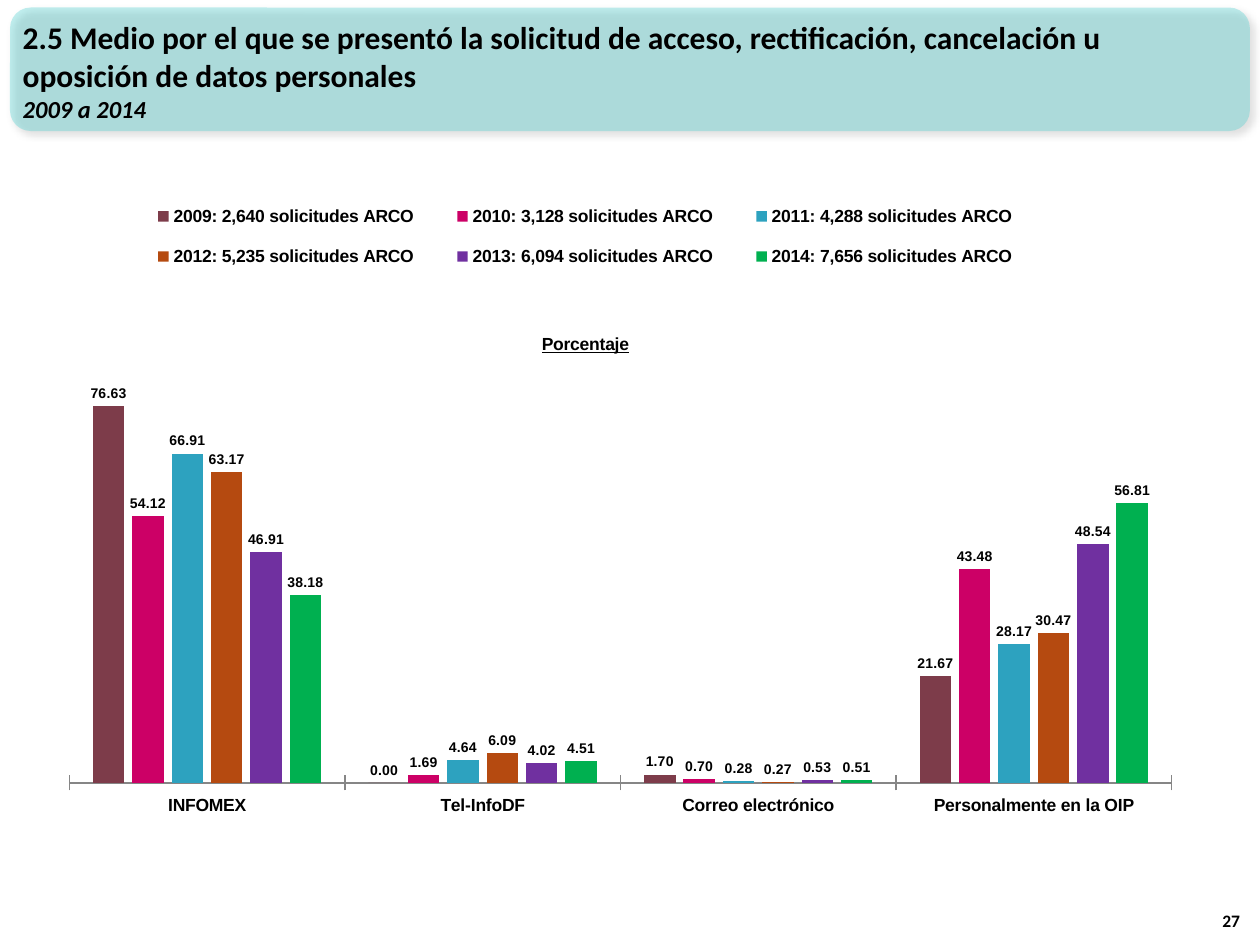
from lxml.etree import SubElement
from pptx import Presentation
from pptx.chart.data import CategoryChartData
from pptx.dml.color import RGBColor
from pptx.enum.chart import XL_CHART_TYPE, XL_LABEL_POSITION, XL_LEGEND_POSITION, XL_TICK_LABEL_POSITION, XL_TICK_MARK
from pptx.enum.shapes import MSO_SHAPE
from pptx.enum.text import MSO_ANCHOR, MSO_AUTO_SIZE, PP_ALIGN
from pptx.oxml import parse_xml
from pptx.oxml.ns import nsdecls, qn
from pptx.util import Inches, Pt

CATEGORIES = ["INFOMEX", "Tel-InfoDF", "Correo electrónico", "Personalmente en la OIP"]
SERIES = [
    ("2009: 2,640 solicitudes ARCO", (76.63, 0, 1.7, 21.67), "7D3C4A"),
    ("2010: 3,128 solicitudes ARCO", (54.12, 1.69, 0.7, 43.48), "CC0066"),
    ("2011: 4,288 solicitudes ARCO", (66.91, 4.64, 0.28, 28.17), "2DA2BF"),
    ("2012: 5,235 solicitudes ARCO", (63.17, 6.09, 0.27, 30.47), "B54A10"),
    ("2013: 6,094 solicitudes ARCO", (46.91, 4.02, 0.53, 48.54), "7030A0"),
    ("2014: 7,656 solicitudes ARCO", (38.18, 4.51, 0.51, 56.81), "00B050"),
]
NUMBER_FORMAT = "#,##0.00"


def rgb(color):
    return RGBColor.from_string(color)


def style_font(font, size, name, italic=None, underline=None):
    font.size = Pt(size)
    font.name = name
    font.bold = True
    font.italic = italic
    font.underline = underline
    font.color.rgb = rgb("000000")


def add_banner(s):
    sp = s.shapes.add_shape(MSO_SHAPE.ROUNDED_RECTANGLE, Inches(0.08), Inches(0.06), Inches(9.84), Inches(0.98))
    sp.fill.solid()
    sp.fill.fore_color.rgb = rgb("33CCCC")
    fill_color = sp.element.spPr.find(qn("a:solidFill"))[0]
    SubElement(fill_color, qn("a:alpha"), val="30000")
    sp.line.fill.background()
    sp.element.spPr.append(parse_xml(
        f'<a:effectLst {nsdecls("a")}>'
        f'<a:outerShdw blurRad="{Pt(4)}" dist="{Pt(3)}" dir="2700000" algn="tl" rotWithShape="0">'
        '<a:srgbClr val="000000"><a:alpha val="40000"/></a:srgbClr></a:outerShdw></a:effectLst>'))
    s.shapes.title.element.addprevious(sp.element)


def format_title(s):
    sp = s.shapes.title
    sp.left, sp.top, sp.width, sp.height = Inches(0.08), Inches(0.09), Inches(9.17), Inches(0.94)
    tf = sp.text_frame
    tf.text = ("2.5 Medio por el que se presentó la solicitud de acceso, rectificación, "
               "cancelación u oposición de datos personales\n2009 a 2014")
    tf.word_wrap = True
    tf.auto_size = MSO_AUTO_SIZE.NONE
    tf.vertical_anchor = MSO_ANCHOR.MIDDLE
    for p, size, italic in zip(tf.paragraphs, (18, 14), (False, True)):
        p.alignment = PP_ALIGN.LEFT
        p.space_before = Pt(0)
        style_font(p.runs[0].font, size, "Calibri", italic)


def add_page_number(s, number):
    sp = s.shapes.add_textbox(Inches(9.54), Inches(7.04), Inches(0.4), Inches(0.4))
    tf = sp.text_frame
    tf.text = number
    tf.word_wrap = True
    tf.vertical_anchor = MSO_ANCHOR.BOTTOM
    p = tf.paragraphs[0]
    p.alignment = PP_ALIGN.RIGHT
    style_font(p.runs[0].font, 10, "Calibri")


def set_layout(parent, follower, inner=False, **position):
    for old in parent.findall(qn("c:layout")):
        parent.remove(old)
    target = '<c:layoutTarget val="inner"/>' if inner else ""
    modes = "".join(f'<c:{k}Mode val="edge"/>' for k in "xy")
    values = "".join(f'<c:{k} val="{v}"/>' for k, v in position.items())
    parent.find(qn(follower)).addprevious(parse_xml(
        f'<c:layout {nsdecls("c")}><c:manualLayout>{target}{modes}{values}</c:manualLayout></c:layout>'))


def format_axes(chart):
    axis = chart.category_axis
    axis.major_tick_mark = XL_TICK_MARK.CROSS
    axis.tick_label_position = XL_TICK_LABEL_POSITION.LOW
    axis.format.line.color.rgb = rgb("868686")
    axis = chart.value_axis
    axis.minimum_scale, axis.maximum_scale = 0, 90
    axis.has_major_gridlines = False
    axis.visible = False
    axis.tick_labels.number_format = NUMBER_FORMAT
    axis.tick_labels.number_format_is_linked = False


def format_series(series, color):
    series.format.fill.solid()
    series.format.fill.fore_color.rgb = rgb(color)
    series.invert_if_negative = False
    labels = series.data_labels
    labels.show_value = True
    labels.position = XL_LABEL_POSITION.OUTSIDE_END
    labels.number_format = NUMBER_FORMAT
    labels.number_format_is_linked = False
    style_font(labels.font, 8, "Arial")


def add_percent_chart(s):
    data = CategoryChartData(number_format=NUMBER_FORMAT)
    data.categories = CATEGORIES
    for name, values, _ in SERIES:
        data.add_series(name, values)
    chart = s.shapes.add_chart(XL_CHART_TYPE.COLUMN_CLUSTERED, Inches(0.31), Inches(1.25),
                               Inches(9.22), Inches(5.7), data).chart
    style_font(chart.font, 10, "Arial")

    tf = chart.chart_title.text_frame
    tf.text = "Porcentaje"
    style_font(tf.paragraphs[0].runs[0].font, 10, "Arial", underline=True)
    title = chart.chart_title._element
    title.find(qn("c:overlay")).set("val", "1")
    set_layout(title, "c:overlay", x=0.43, y=0.24)

    chart.has_legend = True
    chart.legend.position = XL_LEGEND_POSITION.TOP
    chart.legend.include_in_layout = False
    style_font(chart.legend.font, 10, "Arial")
    set_layout(chart.legend._element, "c:overlay", x=0.07, y=0.04, w=0.8, h=0.14)

    plot = chart.plots[0]
    plot.gap_width = 150
    plot.overlap = -25
    plot.vary_by_categories = False
    plot_area = chart.element.find(".//" + qn("c:plotArea"))
    set_layout(plot_area, "c:barChart", inner=True, x=0.026, y=0.254, w=0.949, h=0.617)
    format_axes(chart)
    for series, (_, _, color) in zip(plot.series, SERIES):
        format_series(series, color)


def main():
    prs = Presentation()
    prs.slide_width, prs.slide_height = Inches(10), Inches(7.5)
    s = prs.slides.add_slide(prs.slide_layouts[5])
    add_banner(s)
    format_title(s)
    add_page_number(s, "27")
    add_percent_chart(s)
    prs.save("out.pptx")


if __name__ == "__main__":
    main()
